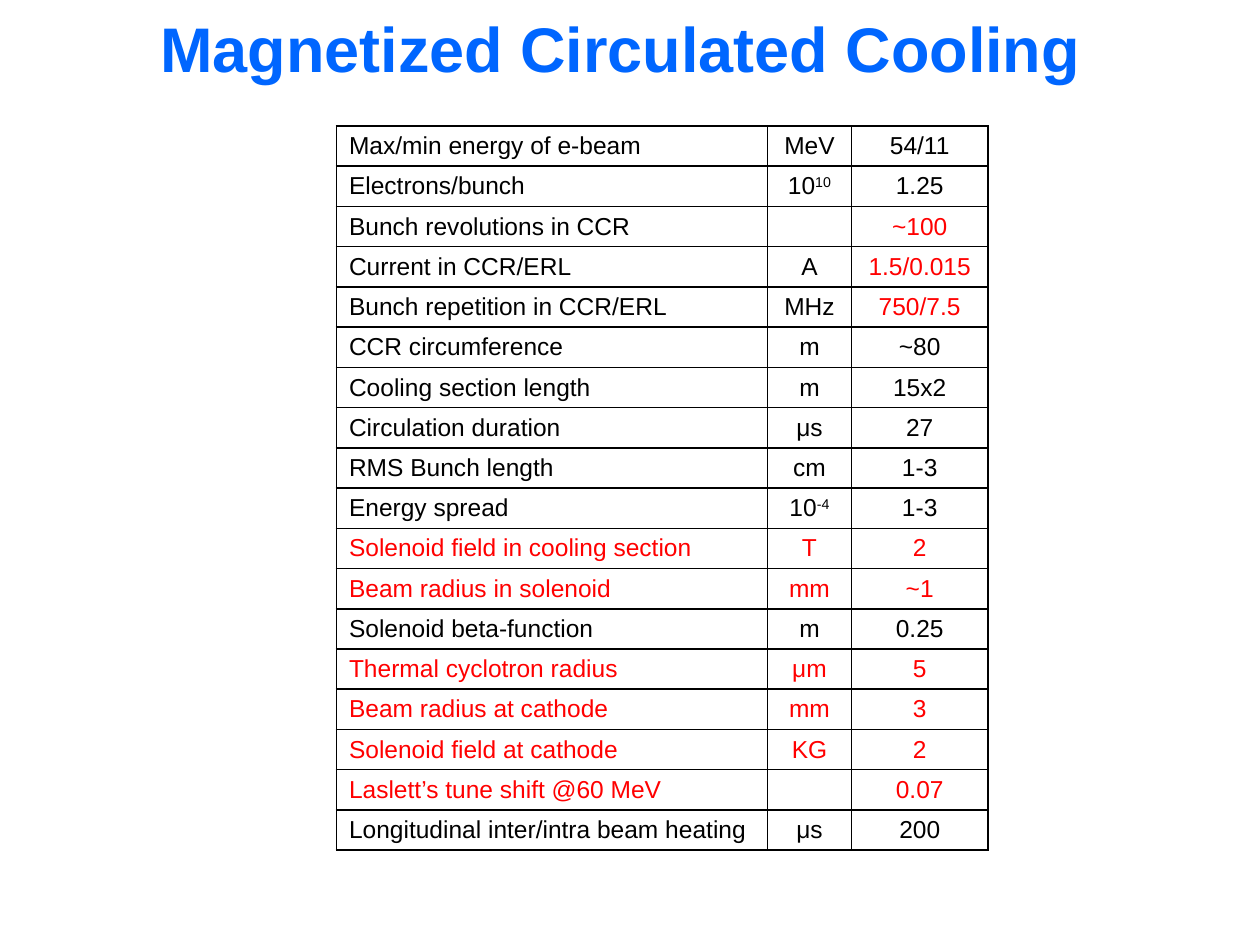
from lxml.etree import SubElement
from pptx import Presentation
from pptx.dml.color import RGBColor
from pptx.enum.text import MSO_ANCHOR, PP_ALIGN
from pptx.oxml.ns import qn
from pptx.util import Inches, Pt

COLORS = {"title": "0066FF", "text": "000000", "key": "FF0000", "line": "000000"}
TITLE = "Magnetized Circulated Cooling"
WIDTHS = (3.42, 0.67, 1.08)
HEIGHT = 5.75
PLAIN = ("text", "text", "text")
VALUE = ("text", "text", "key")
KEY = ("key", "key", "key")
ROWS = [
    ("Max/min energy of e-beam", "MeV", "54/11", PLAIN),
    ("Electrons/bunch", "10^10", "1.25", PLAIN),
    ("Bunch revolutions in CCR", "", "~100", VALUE),
    ("Current in CCR/ERL", "A", "1.5/0.015", VALUE),
    ("Bunch repetition in CCR/ERL", "MHz", "750/7.5", VALUE),
    ("CCR circumference", "m", "~80", PLAIN),
    ("Cooling section length", "m", "15x2", PLAIN),
    ("Circulation duration", "μs", "27", PLAIN),
    ("RMS Bunch length", "cm", "1-3", PLAIN),
    ("Energy spread", "10^-4", "1-3", PLAIN),
    ("Solenoid field in cooling section", "T", "2", KEY),
    ("Beam radius in solenoid", "mm", "~1", KEY),
    ("Solenoid beta-function", "m", "0.25", PLAIN),
    ("Thermal cyclotron radius", "μm", "5", KEY),
    ("Beam radius at cathode", "mm", "3", KEY),
    ("Solenoid field at cathode", "KG", "2", KEY),
    ("Laslett’s tune shift @60 MeV", "", "0.07", KEY),
    ("Longitudinal inter/intra beam heating", "μs", "200", PLAIN),
]


def write(frame, text, size=14, color="text", bold=False, align=PP_ALIGN.CENTER):
    para = frame.paragraphs[0]
    para.alignment = align
    if not text:
        SubElement(para._p, qn("a:endParaRPr"), sz=str(size * 100))
        return
    for level, part in enumerate(text.split("^")):
        run = para.add_run()
        run.text = part
        run.font.name = "Arial"
        run.font.size = Pt(size)
        run.font.bold = bold
        run.font.color.rgb = RGBColor.from_string(COLORS[color])
        if level:
            run._r.get_or_add_rPr().set("baseline", "30000")


def border(cell):
    props = cell._tc.get_or_add_tcPr()
    for side in ("lnL", "lnR", "lnT", "lnB"):
        line = SubElement(props, qn("a:" + side), w=str(Pt(1)))
        fill = SubElement(line, qn("a:solidFill"))
        SubElement(fill, qn("a:srgbClr"), val=COLORS["line"])


def main():
    deck = Presentation()
    deck.slide_width, deck.slide_height = Inches(10), Inches(7.5)
    slide = deck.slides.add_slide(deck.slide_layouts[6])

    title = slide.shapes.add_textbox(0, 0, Inches(9.85), Inches(0.75)).text_frame
    title.word_wrap = True
    title.vertical_anchor = MSO_ANCHOR.MIDDLE
    write(title, TITLE, size=36, color="title", bold=True)

    table = slide.shapes.add_table(
        len(ROWS), len(WIDTHS), Inches(2.67), Inches(1),
        Inches(sum(WIDTHS)), Inches(HEIGHT)).table
    table.first_row = table.horz_banding = False
    for column, width in zip(table.columns, WIDTHS):
        column.width = Inches(width)
    for row, (*texts, tones) in zip(table.rows, ROWS):
        row.height = Inches(HEIGHT / len(ROWS))
        for col, (cell, text, tone) in enumerate(zip(row.cells, texts, tones)):
            border(cell)
            cell.fill.background()
            cell.margin_top = cell.margin_bottom = Inches(0.03)
            cell.vertical_anchor = MSO_ANCHOR.MIDDLE
            align = PP_ALIGN.CENTER if col else PP_ALIGN.LEFT
            write(cell.text_frame, text, color=tone, align=align)

    deck.save("out.pptx")


if __name__ == "__main__":
    main()
